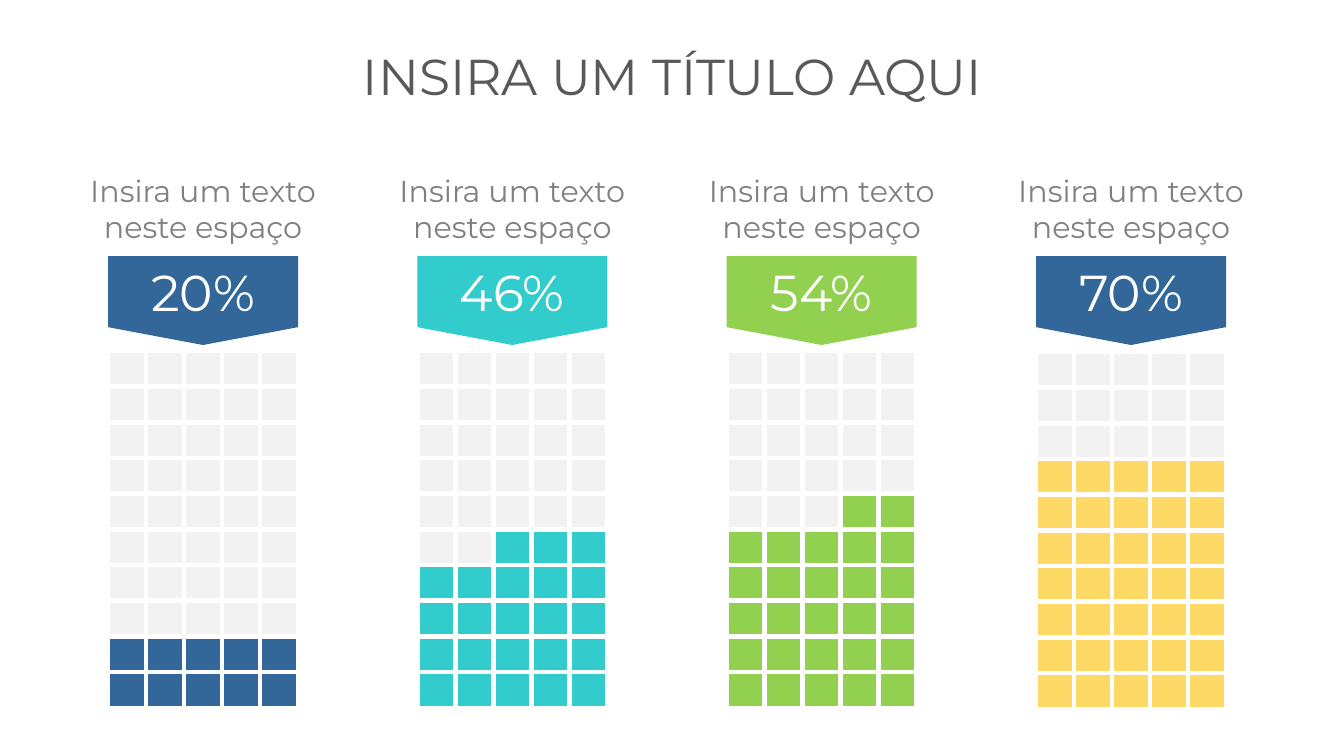
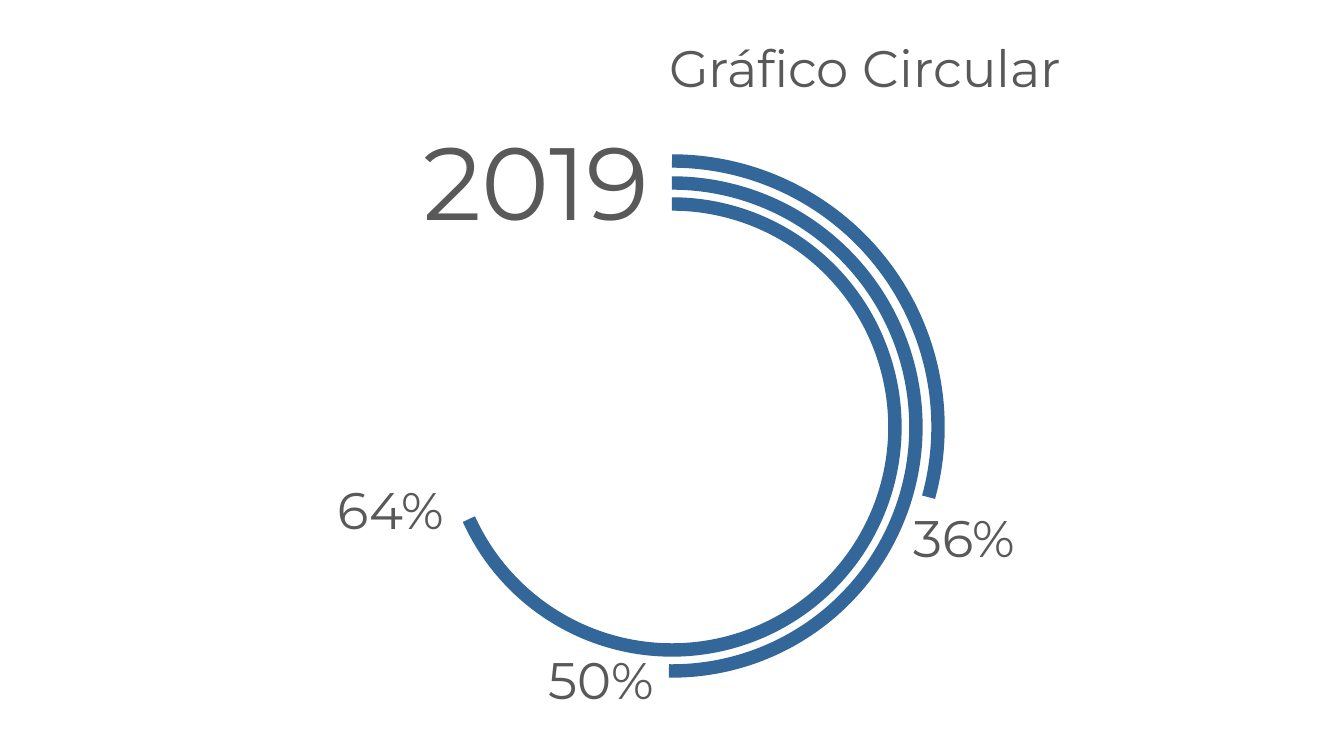
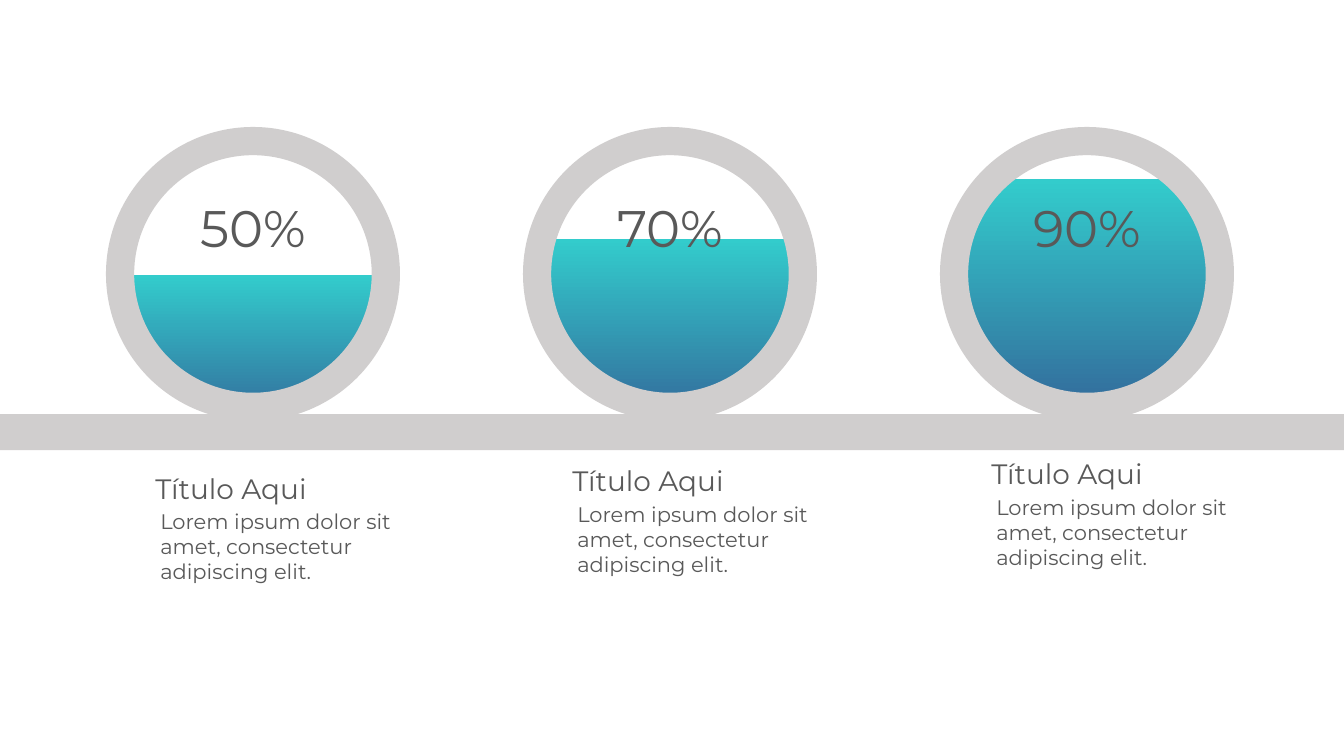
import pptx
import pptx.dml.color
import pptx.enum.shapes
import pptx.enum.text
import pptx.oxml
import pptx.oxml.ns
import pptx.util

SCALE = 914400 / 84
WIDE, HIGH = 1344, 756
FONT = "Montserrat"
HUES = {
    "ink": "595959", "gray": "808080", "white": "FFFFFF", "pale": "F2F2F2",
    "blue": "336699", "teal": "33CCCC", "green": "92D050", "gold": "FFD966",
    "ring": "D0CECE",
}
KINDS = pptx.enum.shapes.MSO_SHAPE
ALIGN = pptx.enum.text.PP_ALIGN
MIDDLE = pptx.enum.text.MSO_ANCHOR.MIDDLE
GROW = pptx.enum.text.MSO_AUTO_SIZE.SHAPE_TO_FIT_TEXT
SPACE = pptx.oxml.ns.nsdecls("a")

HEAD = ("INSIRA UM TÍTULO AQUI", (346, 41, 653, 70), 43.2)
NOTE = ["Insira um texto", "neste espaço"]
STACKS = [
    ("20%", "blue", "blue", 10, 351),
    ("46%", "teal", "teal", 23, 351),
    ("54%", "green", "green", 27, 351),
    ("70%", "blue", "gold", 35, 352),
]
STACK = {"first": 108, "last": 1036, "width": 190, "height": 357}
ROWS, COLS = 10, 5

ARCS = [(446, 155.6), (488, 90.7), (532, 15.3)]
HUB = (672, 427)
LABELS = [
    ("2019", (404, 114, 264, 133), 88),
    ("36%", (899, 502, 131, 71), 44),
    ("50%", (535, 644, 133, 71), 44),
    ("64%", (323, 474, 136, 71), 44),
    ("Gráfico Circular", (655, 32, 421, 71), 44),
]

TANKS = [
    ("50%", 275, (145, 467), (152, 504)),
    ("70%", 239, (562, 459), (569, 497)),
    ("90%", 179, (981, 452), (988, 490)),
]
TANK = {"left": 253, "step": 417, "base": 445}
MASK = {"width": 384, "top": 57, "base": 450}
HOLE = {"mid": 273, "wide": 145, "high": 147}
BEND = 0.55
TOPIC = "Título Aqui"
BODY = "Lorem ipsum dolor sit amet, consectetur adipiscing elit."


def emu(px):
    return pptx.util.Emu(round(px * SCALE))


def box(*sides):
    return [emu(side) for side in sides]


def rgb(hue):
    return pptx.dml.color.RGBColor.from_string(HUES[hue])


def style(item, **props):
    for name, value in props.items():
        setattr(item, name, value)


def paint(item, hue):
    item.fill.solid()
    item.fill.fore_color.rgb = rgb(hue)


def write(frame, lines, size, hue, align):
    frame.text = "\n".join(lines)
    for para in frame.paragraphs:
        para.alignment = align
        style(para.runs[0].font, name=FONT, size=pptx.util.Pt(size))
        para.runs[0].font.color.rgb = rgb(hue)


def label(slide, lines, place, size, hue="ink", align=ALIGN.CENTER, wrap=False):
    frame = slide.shapes.add_textbox(*box(*place)).text_frame
    write(frame, lines, size, hue, align)
    style(frame, word_wrap=wrap, auto_size=GROW)


def bare(shape):
    shape.shadow.inherit = False
    shape.line.fill.background()
    return shape


def draw(slide, kind, place, hue):
    shape = bare(slide.shapes.add_shape(kind, *box(*place)))
    paint(shape, hue)
    return shape


def edge(cell):
    props = cell._tc.get_or_add_tcPr()
    for spot, side in enumerate(("lnL", "lnR", "lnT", "lnB")):
        line = pptx.oxml.parse_xml(
            f'<a:{side} {SPACE} w="57150"><a:solidFill>'
            f'<a:srgbClr val="{HUES["white"]}"/></a:solidFill></a:{side}>')
        props.insert(spot, line)


def grid(slide, left, top, count, hue):
    place = box(left, top, STACK["width"], STACK["height"])
    table = slide.shapes.add_table(ROWS, COLS, *place).table
    style(table, first_row=False, horz_banding=False)
    for spot, cell in enumerate(table.iter_cells()):
        style(cell, margin_top=0, margin_bottom=0)
        paint(cell, hue if spot >= ROWS * COLS - count else "pale")
        edge(cell)


def stacks(slide):
    step = (STACK["last"] - STACK["first"]) / (len(STACKS) - 1)
    for spot, (share, flag, hue, count, top) in enumerate(STACKS):
        left = STACK["first"] + spot * step
        grid(slide, left, top, count, hue)
        sign = draw(slide, KINDS.FLOWCHART_OFFPAGE_CONNECTOR,
                    (left, 256, STACK["width"], 89), flag)
        write(sign.text_frame, [share], 43.2, "white", ALIGN.CENTER)
        style(sign.text_frame, vertical_anchor=MIDDLE, word_wrap=False)
        label(slide, NOTE, (left - 29, 168, 248, 81), 25.9, "gray")
    text, place, size = HEAD
    label(slide, [text], place, size)


def arcs(slide):
    for size, end in ARCS:
        place = (HUB[0] - size / 2, HUB[1] - size / 2, size, size)
        arc = slide.shapes.add_shape(KINDS.ARC, *box(*place))
        arc.shadow.inherit = False
        arc.fill.background()
        arc.adjustments[0] = 270 * 0.6
        arc.adjustments[1] = end * 0.6
        arc.line.color.rgb = rgb("blue")
        arc.line.width = pptx.util.Pt(11.5)
    for text, place, size in LABELS:
        label(slide, [text], place, size)


def curve(track, tag, spots):
    dots = ""
    for across, down in spots:
        x = emu(MASK["width"] / 2 + across * HOLE["wide"])
        y = emu(HOLE["mid"] - MASK["top"] + down * HOLE["high"])
        dots += f'<a:pt x="{x}" y="{y}"/>'
    track.append(pptx.oxml.parse_xml(f'<a:{tag} {SPACE}>{dots}</a:{tag}>'))


def mask(slide, mid):
    half = MASK["width"] / 2
    left, top, right, base = box(mid - half, MASK["top"], mid + half, MASK["base"])
    form = slide.shapes.build_freeform(left, top)
    form.add_line_segments([(right, top), (right, base), (left, base)])
    shape = bare(form.convert_to_shape())
    paint(shape, "white")
    track = next(shape._element.iter(pptx.oxml.ns.qn("a:path")))
    curve(track, "moveTo", [(0, -1)])
    x, y = 0, -1
    for turn in range(4):
        u, v = y, -x
        curve(track, "cubicBezTo",
              [(x + BEND * u, y + BEND * v), (u + BEND * x, v + BEND * y), (u, v)])
        x, y = u, v
    curve(track, "close", [])


def tank(slide, mid, level, share):
    place = (mid - 159, level, 319, TANK["base"] - level)
    water = draw(slide, KINDS.RECTANGLE, place, "teal")
    water.fill.gradient()
    water.fill.gradient_angle = 270
    for stop, hue, spot in zip(water.fill.gradient_stops, ("teal", "blue"), (0, 0.91)):
        stop.color.rgb = rgb(hue)
        stop.position = spot
    mask(slide, mid)
    ring = draw(slide, KINDS.DONUT, (mid - 147, 127, 294, 294), "ring")
    ring.adjustments[0] = 0.096
    label(slide, [share], (mid - 66, 192, 133, 71), 44)


def tanks(slide):
    for spot, (share, level, head, body) in enumerate(TANKS):
        tank(slide, TANK["left"] + spot * TANK["step"], level, share)
    shelf = draw(slide, KINDS.ROUNDED_RECTANGLE, (-81, 414, 1554, 36), "ring")
    shelf.adjustments[0] = 0.5
    for share, level, head, body in TANKS:
        label(slide, [TOPIC], (*head, 172, 42), 24)
        label(slide, [BODY], (*body, 249, 85), 18, align=ALIGN.LEFT, wrap=True)


def main():
    deck = pptx.Presentation()
    style(deck, slide_width=emu(WIDE), slide_height=emu(HIGH))
    for fill in (stacks, arcs, tanks):
        fill(deck.slides.add_slide(deck.slide_layouts[6]))
    deck.save("out.pptx")


if __name__ == "__main__":
    main()
